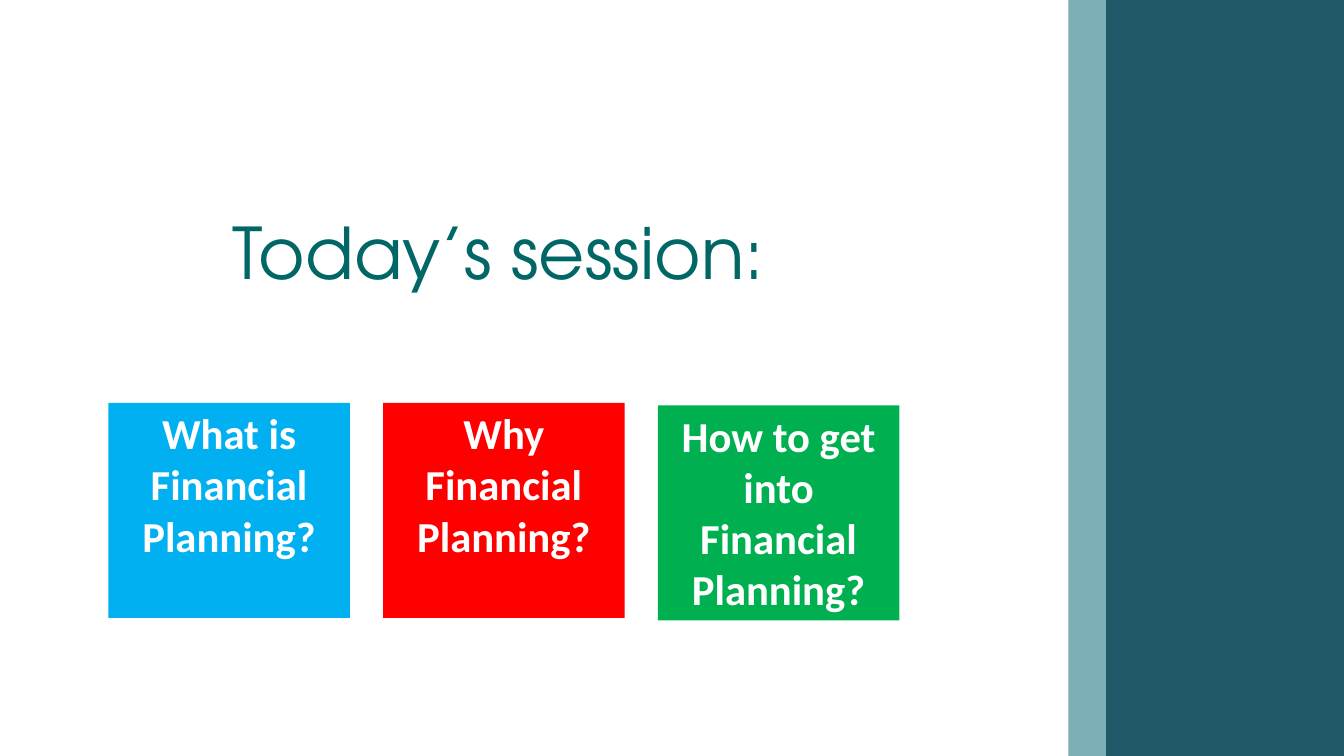
"""Build the session overview slide with three topic cards."""
import dataclasses

import pptx
import pptx.dml.color
import pptx.enum.shapes
import pptx.enum.text
import pptx.util

UNIT = pptx.util.Inches(0.25)
COLUMNS, ROWS = 63, 35.44
CARD_LEFT, CARD_PITCH, CARD_WIDTH, CARD_HEIGHT = 5.08, 12.88, 11.32, 10.08
COLOURS = {
    "dark teal": "215968",
    "pale teal": "7CAEB5",
    "title": "006666",
    "blue": "00B0F0",
    "red": "FF0000",
    "green": "00B050",
    "white": "FFFFFF",
}
TITLE_FONT = {"name": "TeX Gyre Adventor", "size": pptx.util.Pt(60), "bold": False}
CARD_FONT = {"name": "Calibri", "size": pptx.util.Pt(36), "bold": True}
TITLE_FRAME = {
    "word_wrap": True,
    "auto_size": pptx.enum.text.MSO_AUTO_SIZE.NONE,
    "vertical_anchor": pptx.enum.text.MSO_ANCHOR.MIDDLE,
    "margin_left": pptx.util.Inches(0.04),
    "margin_right": pptx.util.Inches(0.04),
    "margin_top": pptx.util.Inches(0.02),
    "margin_bottom": pptx.util.Inches(0.02),
}
CARD_FRAME = {
    "word_wrap": True,
    "auto_size": pptx.enum.text.MSO_AUTO_SIZE.NONE,
    "vertical_anchor": pptx.enum.text.MSO_ANCHOR.TOP,
}


@dataclasses.dataclass
class Area:
    """Hold a place measured in grid columns and rows."""
    column: float
    row: float
    width: float
    height: float

    def lengths(self) -> list[int]:
        """Return left, top, width and height as slide lengths."""
        return [round(value * UNIT) for value in dataclasses.astuple(self)]


@dataclasses.dataclass
class Band:
    """Describe a vertical side band."""
    column: float
    width: float
    colour: str


@dataclasses.dataclass
class Card:
    """Describe a topic card."""
    text: str
    row: float
    colour: str


BANDS = [Band(51.32, 11.68, "dark teal"), Band(50.08, 1.76, "pale teal")]
CARDS = [
    Card("What is Financial Planning?", 18.88, "blue"),
    Card("Why Financial Planning?", 18.88, "red"),
    Card("How to get into Financial Planning?", 19, "green"),
]


def rgb(colour: str) -> pptx.dml.color.RGBColor:
    """Return the named colour."""
    return pptx.dml.color.RGBColor.from_string(COLOURS[colour])


def apply(target: object, values: dict) -> None:
    """Set each attribute of the target from a dict."""
    for name, value in values.items():
        setattr(target, name, value)


def write(box, text: str, frame: dict, font: dict, colour: str, alignment) -> None:
    """Fill a box with one formatted paragraph."""
    apply(box.text_frame, frame)
    para = box.text_frame.paragraphs[0]
    para.alignment = alignment
    span = para.add_run()
    span.text = text
    apply(span.font, font)
    span.font.color.rgb = rgb(colour)


def add_block(page, area: Area, colour: str):
    """Add a plain filled rectangle."""
    block = page.shapes.add_shape(
        pptx.enum.shapes.MSO_SHAPE.RECTANGLE, *area.lengths())
    block.shadow.inherit = False
    block.fill.solid()
    block.fill.fore_color.rgb = rgb(colour)
    block.line.fill.background()
    return block


def add_title(page) -> None:
    """Place and format the title."""
    title = page.shapes.title
    lengths = Area(10.72, 7.96, 29.92, 7.6).lengths()
    apply(title, dict(zip(("left", "top", "width", "height"), lengths)))
    write(title, "Today’s session:", TITLE_FRAME, TITLE_FONT, "title",
          pptx.enum.text.PP_ALIGN.LEFT)


def add_card(page, index: int, card: Card) -> None:
    """Add a topic card at its place in the row."""
    area = Area(CARD_LEFT + index * CARD_PITCH, card.row, CARD_WIDTH, CARD_HEIGHT)
    box = add_block(page, area, card.colour)
    write(box, card.text, CARD_FRAME, CARD_FONT, "white",
          pptx.enum.text.PP_ALIGN.CENTER)


def main() -> None:
    """Build and save the deck."""
    deck = pptx.Presentation()
    deck.slide_width, deck.slide_height = round(COLUMNS * UNIT), round(ROWS * UNIT)
    page = deck.slides.add_slide(deck.slide_layouts.get_by_name("Title Only"))
    page.background.fill.solid()
    page.background.fill.fore_color.rgb = rgb("white")
    for band in BANDS:
        add_block(page, Area(band.column, 0, band.width, ROWS), band.colour)
    add_title(page)
    for index, card in enumerate(CARDS):
        add_card(page, index, card)
    deck.save("out.pptx")


if __name__ == "__main__":
    main()
